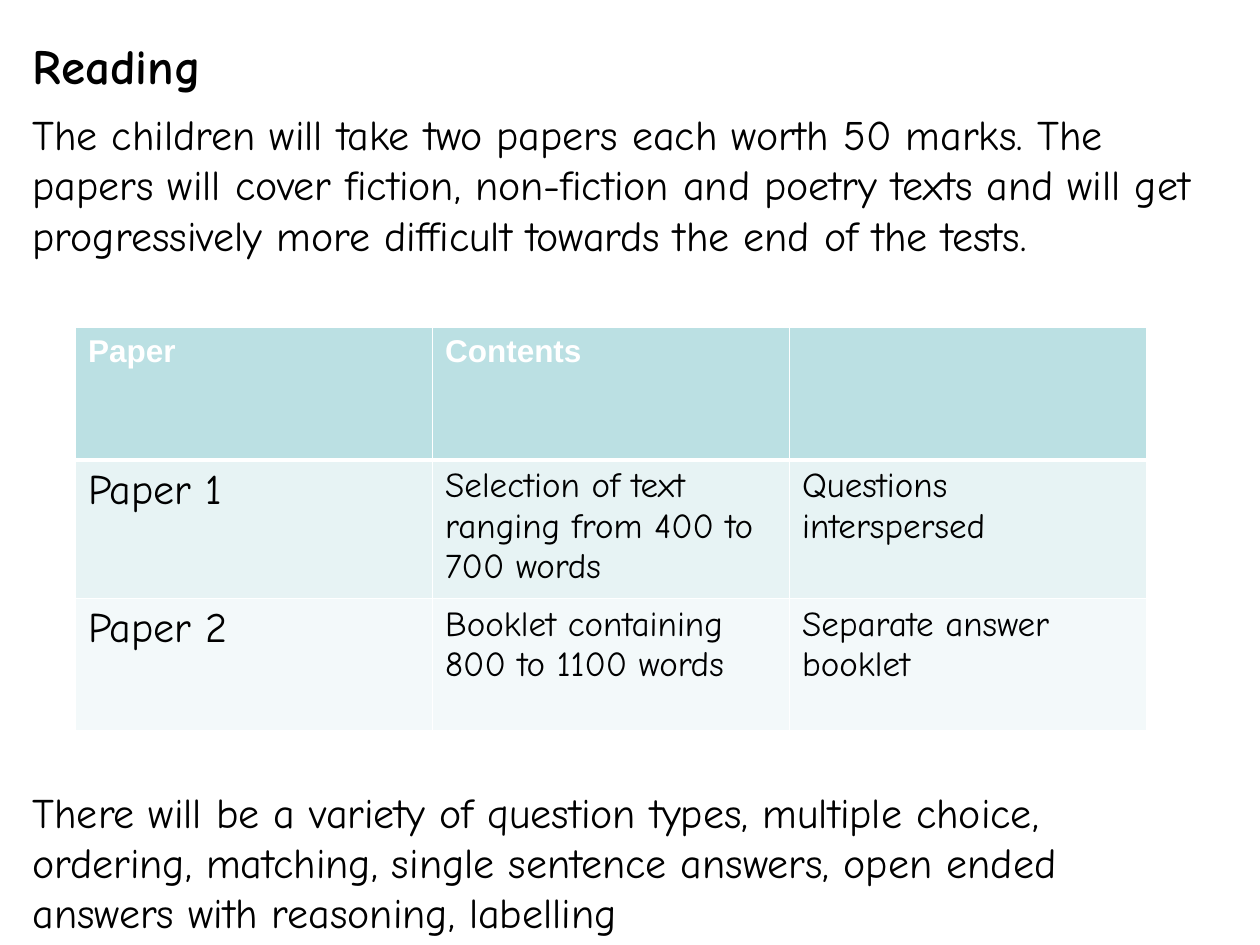
from lxml.etree import SubElement
from pptx import Presentation
from pptx.dml.color import RGBColor
from pptx.enum.text import MSO_ANCHOR, MSO_AUTO_SIZE, PP_ALIGN
from pptx.oxml.ns import qn
from pptx.util import Inches, Pt

BLACK = RGBColor(0x00, 0x00, 0x00)
WHITE = RGBColor(0xFF, 0xFF, 0xFF)
HEADER_TEAL = RGBColor(0xBB, 0xE0, 0xE3)
BAND_FILLS = [RGBColor(0xE7, 0xF3, 0xF4), RGBColor(0xF3, 0xF9, 0xFA)]
HAND_FONT = "Comic Neue"
HEADER_FONT = "Arial"
TITLE_ONLY = 5

INTRO = (
    "The children will take two papers each worth 50 marks. The papers will cover "
    "fiction, non-fiction and poetry texts and will get progressively more difficult "
    "towards the end of the tests."
)
QUESTION_TYPES = (
    "There will be a variety of question types, multiple choice, ordering, matching, "
    "single sentence answers, open ended answers with reasoning, labelling"
)
HEADINGS = ["Paper", "Contents", ""]
PAPERS = [
    ["Paper 1", "Selection of text ranging from 400 to 700 words", "Questions interspersed"],
    ["Paper 2", "Booklet containing 800 to 1100 words", "Separate answer booklet"],
]


def write_text(frame, text, size=24, font=HAND_FONT, color=BLACK, bold=False):
    """Put one left-aligned, formatted paragraph into a text frame."""
    paragraph = frame.paragraphs[0]
    paragraph.alignment = PP_ALIGN.LEFT
    paragraph.font.size = Pt(size)
    if text:
        run = paragraph.add_run()
        run.text = text
        run.font.size = Pt(size)
        run.font.name = font
        run.font.color.rgb = color
        run.font.bold = bold


def add_heading(slide, left, top, width, height):
    """Move the title placeholder into the box and write the heading."""
    heading = slide.shapes.title
    heading.left, heading.top, heading.width, heading.height = left, top, width, height
    frame = heading.text_frame
    frame.auto_size = MSO_AUTO_SIZE.NONE
    frame.vertical_anchor = MSO_ANCHOR.TOP
    frame.word_wrap = False
    write_text(frame, "Reading", size=28, bold=True)


def add_passage(slide, text, left, top, width, height):
    """Add a wrapped passage of running text in the box."""
    frame = slide.shapes.add_textbox(left, top, width, height).text_frame
    frame.word_wrap = True
    write_text(frame, text)


def style_cell(cell, fill, top_width=1, bottom_width=1):
    """Give a cell white borders and a solid fill."""
    properties = cell._tc.get_or_add_tcPr()
    widths = {"a:lnL": 1, "a:lnR": 1, "a:lnT": top_width, "a:lnB": bottom_width}
    for tag, width in widths.items():
        border = SubElement(properties, qn(tag), w=str(Pt(width)))
        SubElement(SubElement(border, qn("a:solidFill")), qn("a:srgbClr"), val=str(WHITE))
    cell.fill.solid()
    cell.fill.fore_color.rgb = fill


def add_papers_table(slide, left, top, width, height):
    """Add the table of papers with equal columns and rows in the box."""
    papers = slide.shapes.add_table(
        len(PAPERS) + 1, len(HEADINGS), left, top, width, height
    ).table
    for column, heading in enumerate(HEADINGS):
        cell = papers.cell(0, column)
        style_cell(cell, HEADER_TEAL, bottom_width=3)
        write_text(cell.text_frame, heading, size=18, font=HEADER_FONT, color=WHITE, bold=True)
    for row, (details, fill) in enumerate(zip(PAPERS, BAND_FILLS), start=1):
        for column, detail in enumerate(details):
            cell = papers.cell(row, column)
            style_cell(cell, fill, top_width=3 if row == 1 else 1)
            write_text(cell.text_frame, detail, size=24 if column == 0 else 20)


def main():
    """Build the reading test slide and save it."""
    deck = Presentation()
    deck.slide_width, deck.slide_height = Inches(10), Inches(7.5)
    slide = deck.slides.add_slide(deck.slide_layouts[TITLE_ONLY])
    margin = Inches(0.16)
    add_heading(slide, margin, Inches(0.23), Inches(1.64), Inches(0.57))
    add_passage(slide, INTRO, margin, Inches(0.81), Inches(9.63), Inches(2.52))
    add_papers_table(slide, Inches(0.6), Inches(2.6), Inches(8.5), Inches(3.15))
    add_passage(slide, QUESTION_TYPES, margin, Inches(6.19), Inches(8.52), Inches(1.31))
    deck.save("out.pptx")


if __name__ == "__main__":
    main()
